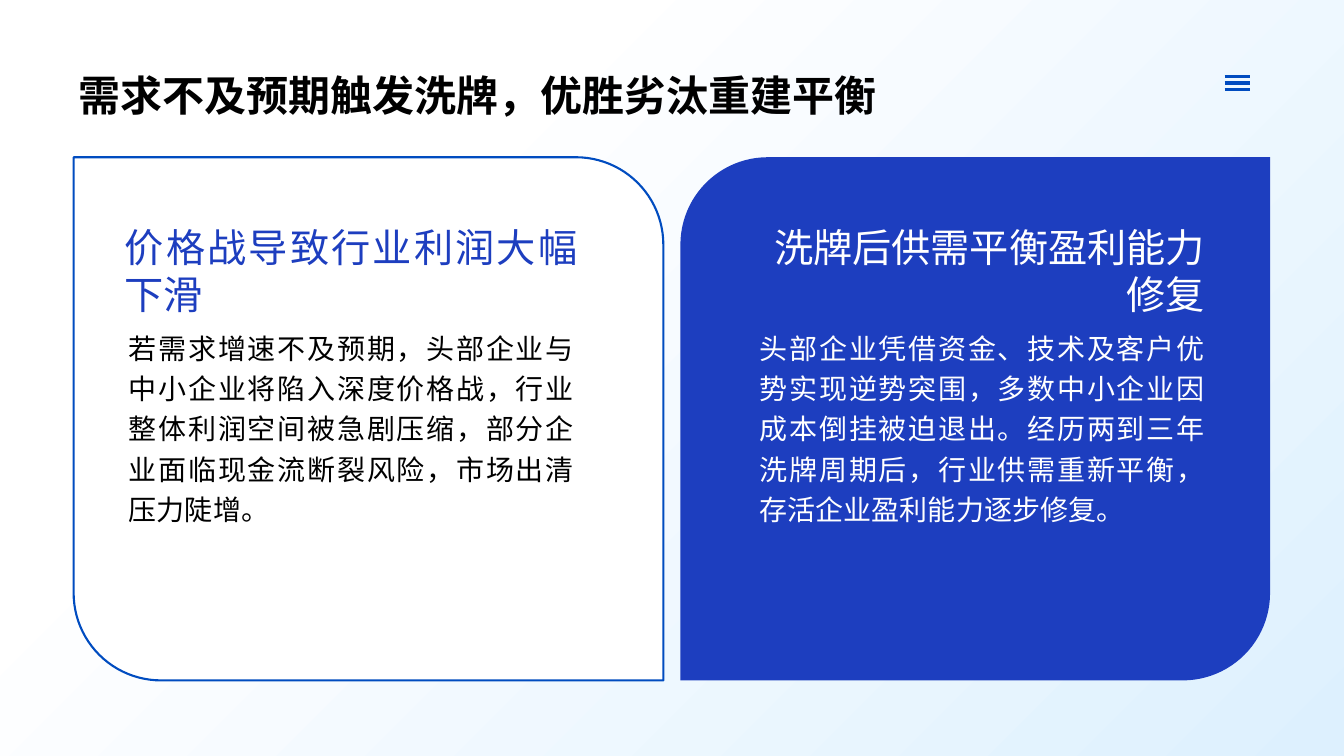
from copy import deepcopy
from lxml.etree import SubElement as Sub
from pptx import Presentation
from pptx.dml.color import RGBColor
from pptx.enum.lang import MSO_LANGUAGE_ID as Lang
from pptx.enum.shapes import MSO_CONNECTOR as Conn, MSO_SHAPE as Kind
from pptx.enum.text import MSO_ANCHOR as Anchor, MSO_AUTO_SIZE as Auto, PP_ALIGN as Align
from pptx.oxml.ns import qn
from pptx.util import Pt

BLUE = RGBColor(0x1D, 0x3E, 0xBF)
EDGE = RGBColor(0x00, 0x4C, 0xC0)
SKY = RGBColor(0xDD, 0xF0, 0xFE)
WHITE = RGBColor(0xFF, 0xFF, 0xFF)
BLACK = RGBColor(0x00, 0x00, 0x00)


class Deck:
    """Hold the font and the current slide, and draw each kind of element."""

    font = "Karla"

    def __init__(self, wide, high):
        self.prs = Presentation()
        self.prs.slide_width, self.prs.slide_height = Pt(wide), Pt(high)
        self.slide = self.prs.slides.add_slide(self.prs.slide_layouts[6])
        self.shapes = self.slide.shapes

    def back(self, stops, angle):
        fill = self.slide.background.fill
        fill.gradient()
        fill.gradient_angle = angle
        last = self.slide.element.xpath(".//a:gsLst/a:gs")[-1]
        for _ in stops[2:]:
            last.addnext(deepcopy(last))
        for stop, (pos, color) in zip(fill.gradient_stops, stops):
            stop.position = pos
            stop.color.rgb = color

    def card(self, box, round_a, round_b, fill, edge=None):
        card = self.shapes.add_shape(Kind.ROUND_2_DIAG_RECTANGLE, *map(Pt, box))
        card.shadow.inherit = False
        card.adjustments[0], card.adjustments[1] = round_a, round_b
        card.fill.solid()
        card.fill.fore_color.rgb = fill
        if edge:
            card.line.color.rgb = edge
            card.line.width = Pt(1.5)
        else:
            card.line.fill.background()

    def line(self, left, right, y):
        line = self.shapes.add_connector(Conn.STRAIGHT, Pt(left), Pt(y), Pt(right), Pt(y))
        line.line.color.rgb = EDGE
        line.line.width = Pt(2.5)
        Sub(line._element.spPr, qn("a:effectLst"))

    def text(self, box, words, size, color, align=Align.LEFT, bold=None,
             space=None, anchor=Anchor.TOP):
        frame = self.shapes.add_textbox(*map(Pt, box)).text_frame
        frame.word_wrap = True
        frame.auto_size = Auto.SHAPE_TO_FIT_TEXT
        frame.vertical_anchor = anchor
        para = frame.paragraphs[0]
        para.alignment = align
        para.line_spacing = space
        run = para.add_run()
        run.text = words
        font = run.font
        font.name, font.size, font.bold = self.font, Pt(size), bold
        font.color.rgb = color
        font.language_id = Lang.SIMPLIFIED_CHINESE
        Sub(run._r.get_or_add_rPr(), qn("a:ea"), typeface=self.font)

    def save(self):
        self.prs.save("out.pptx")


def main():
    deck = Deck(960, 540)
    deck.back([(0, WHITE), (0.28, WHITE), (1, SKY)], 315)
    deck.card((486, 112.3, 421.2, 373.7), 0.167, 0, BLUE)
    deck.card((52.6, 112.3, 421.2, 373.7), 0, 0.167, WHITE, EDGE)
    deck.text((49, 46, 799, 43.2), "需求不及预期触发洗牌，优胜劣汰重建平衡", 30, BLACK, bold=True)
    for row in range(3):
        deck.line(874.8, 892.8, 54.7 + 4.7 * row)

    panels = [
        (82, 85, BLUE, BLACK, Align.JUSTIFY, "价格战导致行业利润大幅下滑",
         "若需求增速不及预期，头部企业与中小企业将陷入深度价格战，行业整体利润空间被急剧压缩，"
         "部分企业面临现金流断裂风险，市场出清压力陡增。"),
        (530, 535.6, WHITE, WHITE, Align.RIGHT, "洗牌后供需平衡盈利能力修复",
         "头部企业凭借资金、技术及客户优势实现逆势突围，多数中小企业因成本倒挂被迫退出。"
         "经历两到三年洗牌周期后，行业供需重新平衡，存活企业盈利能力逐步修复。"),
    ]
    for head_x, body_x, head_ink, body_ink, align, head, body in panels:
        deck.text((head_x, 154, 337.7, 78.5), head, 28, head_ink, align, anchor=Anchor.MIDDLE)
        deck.text((body_x, 228.2, 332, 152), body, 20, body_ink, Align.JUSTIFY, space=1.2)
    deck.save()


if __name__ == "__main__":
    main()
